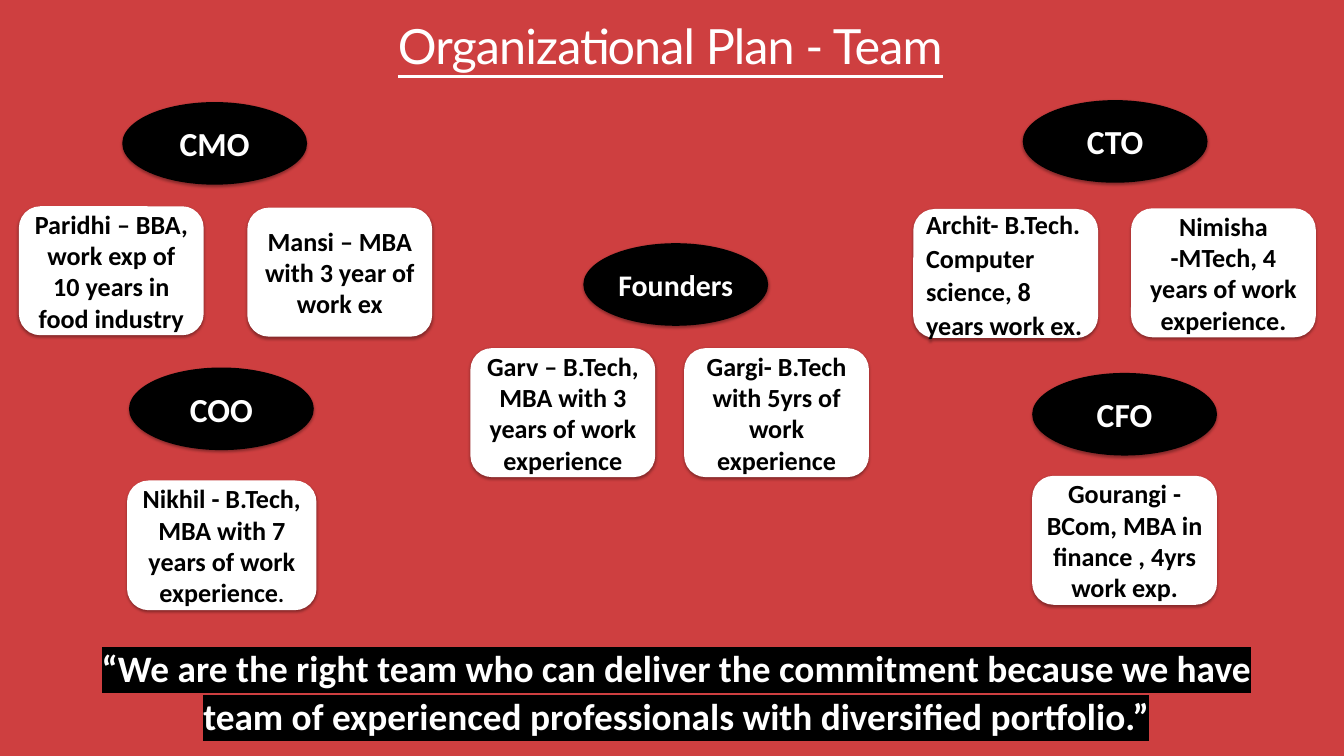
from lxml import etree
from pptx import Presentation
from pptx.dml.color import RGBColor
from pptx.enum import shapes, text
from pptx.oxml import ns
from pptx.util import Pt

RED = RGBColor(0xCE, 0x3F, 0x40)
WHITE = RGBColor(0xFF, 0xFF, 0xFF)
BLACK = RGBColor(0, 0, 0)

CARD_SIZE = (198, 138.2)
ROLE_SIZE = (198, 88.5)

ROLES = [
    ("CMO", 131, 109.4, 36),
    ("COO", 138.2, 393.8, 36),
    ("Founders", 625, 260.6, 32),
    ("CTO", 1095.8, 107.3, 36),
    ("CFO", 1105.9, 399.6, 36),
]

MEMBERS = [
    ("Paridhi – BBA, work exp of 10 years in food industry", 20.2, 221),
    ("Mansi – MBA with 3 year of work ex", 265, 222.5),
    ("Garv – B.Tech, MBA with 3 years of work experience", 504, 373),
    ("Gargi- B.Tech with 5yrs of work experience", 733, 373),
    ("Nimisha -MTech, 4 years of work experience.", 1211.8, 223.2),
    ("Gourangi - BCom, MBA in finance , 4yrs work exp.", 1105.9, 509.8),
]

QUOTE = (
    "“We are the right team who can deliver the commitment because we have "
    "team of experienced professionals with diversified portfolio.”"
)


def add_run(paragraph, content, size, color, font="Calibri", bold=True):
    run = paragraph.add_run()
    run.text = content
    run.font.size = Pt(size)
    run.font.name = font
    run.font.bold = bold
    run.font.color.rgb = color
    return run


def set_spacing(paragraph, line=1.07, around=3.8):
    paragraph.line_spacing = line
    paragraph.space_before = paragraph.space_after = Pt(around)


def add_shadow(shape):
    shape.shadow.inherit = False
    effects = shape._element.spPr.find(ns.qn("a:effectLst"))
    shadow = etree.SubElement(
        effects, ns.qn("a:outerShdw"), blurRad=str(Pt(3.1)),
        dist=str(Pt(1.8)), dir="5400000", rotWithShape="0")
    color = etree.SubElement(shadow, ns.qn("a:srgbClr"), val=str(BLACK))
    etree.SubElement(color, ns.qn("a:alpha"), val="35000")


def add_block(slide, kind, left, top, size, fill):
    width, height = size
    shape = slide.shapes.add_shape(kind, Pt(left), Pt(top), Pt(width), Pt(height))
    shape.fill.solid()
    shape.fill.fore_color.rgb = fill
    shape.line.fill.background()
    add_shadow(shape)
    frame = shape.text_frame
    frame.word_wrap = True
    frame.vertical_anchor = text.MSO_ANCHOR.MIDDLE
    paragraph = frame.paragraphs[0]
    paragraph.alignment = text.PP_ALIGN.CENTER
    return paragraph


def add_role(slide, name, left, top, size):
    paragraph = add_block(slide, shapes.MSO_SHAPE.OVAL, left, top, ROLE_SIZE, BLACK)
    add_run(paragraph, name, size, WHITE)


def add_member(slide, description, left, top, size=CARD_SIZE):
    paragraph = add_block(
        slide, shapes.MSO_SHAPE.ROUNDED_RECTANGLE, left, top, size, WHITE)
    add_run(paragraph, description, 28, BLACK)
    return paragraph


def place_placeholder(placeholder, left, top, width, height):
    placeholder.left, placeholder.top = Pt(left), Pt(top)
    placeholder.width, placeholder.height = Pt(width), Pt(height)
    frame = placeholder.text_frame
    frame.word_wrap = True
    frame.auto_size = text.MSO_AUTO_SIZE.NONE
    frame.vertical_anchor = text.MSO_ANCHOR.TOP
    paragraph = frame.paragraphs[0]
    paragraph.alignment = text.PP_ALIGN.CENTER
    return paragraph


def fill_title(slide):
    paragraph = place_placeholder(slide.shapes.title, 338.4, 13, 759.6, 70.6)
    paragraph.space_before = Pt(1)
    run = add_run(paragraph, "Organizational Plan - Team", 52, WHITE, "Lato", False)
    run.font.underline = True
    run._r.get_or_add_rPr().set("spc", "-90")


def fill_quote(slide):
    paragraph = place_placeholder(slide.placeholders[1], 77.8, 684.7, 1293.8, 108.7)
    set_spacing(paragraph)
    properties = paragraph._p.get_or_add_pPr()
    properties.set("marL", "0")
    properties.set("indent", "0")
    etree.SubElement(properties, ns.qn("a:buNone"))
    run = add_run(paragraph, QUOTE, 40, WHITE)
    highlight = etree.Element(ns.qn("a:highlight"))
    etree.SubElement(highlight, ns.qn("a:srgbClr"), val=str(BLACK))
    run._r.get_or_add_rPr().find(ns.qn("a:solidFill")).addnext(highlight)


def main():
    presentation = Presentation()
    presentation.slide_width, presentation.slide_height = Pt(1440), Pt(810)
    slide = presentation.slides.add_slide(presentation.slide_layouts[1])
    slide.background.fill.solid()
    slide.background.fill.fore_color.rgb = RED

    fill_title(slide)
    fill_quote(slide)
    for role in ROLES:
        add_role(slide, *role)
    for member in MEMBERS:
        add_member(slide, *member)

    operations = add_member(
        slide, "Nikhil - B.Tech, MBA with 7 years of work experience",
        136.1, 514.8, (203, 139))
    add_run(operations, ".", 24, BLACK)
    technology = add_member(
        slide, "Archit- B.Tech. Computer  science, 8 years work ex.", 978.5, 223.9)
    technology.alignment = text.PP_ALIGN.LEFT
    set_spacing(technology)

    presentation.save("out.pptx")


if __name__ == "__main__":
    main()
